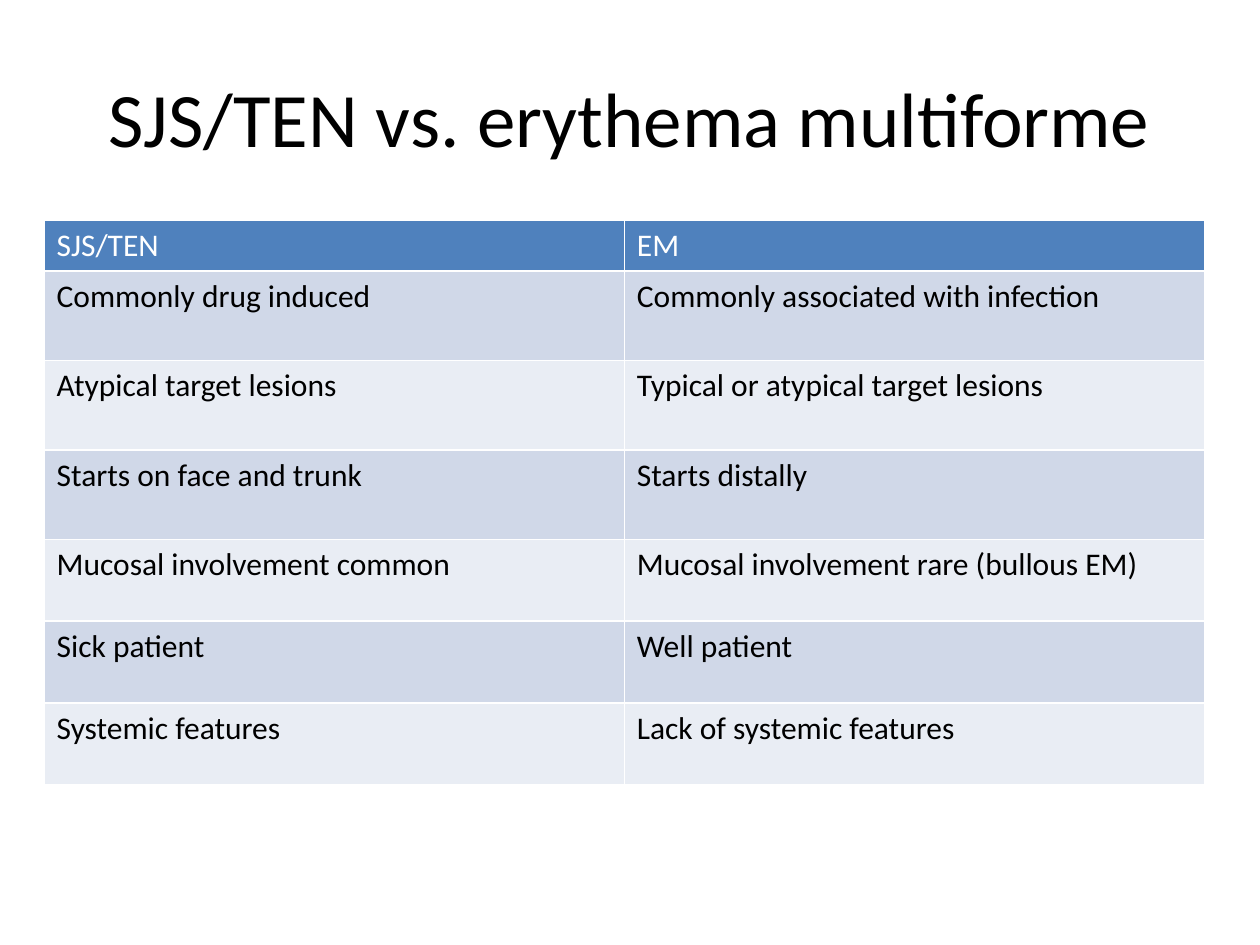
import pptx
import pptx.util
import pptx.dml.color
import pptx.enum.text

Inches = pptx.util.Inches
Pt = pptx.util.Pt
RGBColor = pptx.dml.color.RGBColor

TITLE = "SJS/TEN vs. erythema multiforme"
ROWS = [
    ("SJS/TEN", "EM"),
    ("Commonly drug induced", "Commonly associated with infection"),
    ("Atypical target lesions", "Typical or atypical target lesions"),
    ("Starts on face and trunk", "Starts distally"),
    ("Mucosal involvement common", "Mucosal involvement rare (bullous EM)"),
    ("Sick patient", "Well patient"),
    ("Systemic features", "Lack of systemic features"),
]
HEIGHTS = [0.4] + [0.71] * 3 + [0.65] * 3
WIDTH = 9.21

FONT = "Calibri"
BLACK = RGBColor(0x00, 0x00, 0x00)
WHITE = RGBColor(0xFF, 0xFF, 0xFF)
BLUE = RGBColor(0x4F, 0x81, 0xBD)
BANDS = [RGBColor(0xE9, 0xED, 0xF4), RGBColor(0xD0, 0xD8, 0xE8)]


def add_run(para, text, size, color):
    run = para.add_run()
    run.text = text
    run.font.name = FONT
    run.font.size = Pt(size)
    run.font.bold = False
    run.font.color.rgb = color


def add_title(slide):
    box = slide.shapes.add_textbox(Inches(0.5), Inches(0.3), Inches(9), Inches(1.25))
    frame = box.text_frame
    frame.word_wrap = True
    frame.vertical_anchor = pptx.enum.text.MSO_ANCHOR.MIDDLE
    para = frame.paragraphs[0]
    para.alignment = pptx.enum.text.PP_ALIGN.CENTER
    add_run(para, TITLE, 44, BLACK)


def add_grid(slide):
    count = len(ROWS[0])
    table = slide.shapes.add_table(
        len(ROWS), count, Inches(0.35), Inches(1.75),
        Inches(WIDTH), Inches(sum(HEIGHTS))).table
    for col in table.columns:
        col.width = Inches(WIDTH / count)
    for i, (texts, height) in enumerate(zip(ROWS, HEIGHTS)):
        table.rows[i].height = Inches(height)
        for j, text in enumerate(texts):
            cell = table.cell(i, j)
            cell.fill.solid()
            cell.fill.fore_color.rgb = BANDS[i % 2] if i else BLUE
            add_run(cell.text_frame.paragraphs[0], text, 18, BLACK if i else WHITE)


def main():
    deck = pptx.Presentation()
    deck.slide_width = Inches(10)
    deck.slide_height = Inches(7.5)
    slide = deck.slides.add_slide(deck.slide_layouts[6])
    add_title(slide)
    add_grid(slide)
    deck.save("out.pptx")


if __name__ == "__main__":
    main()
